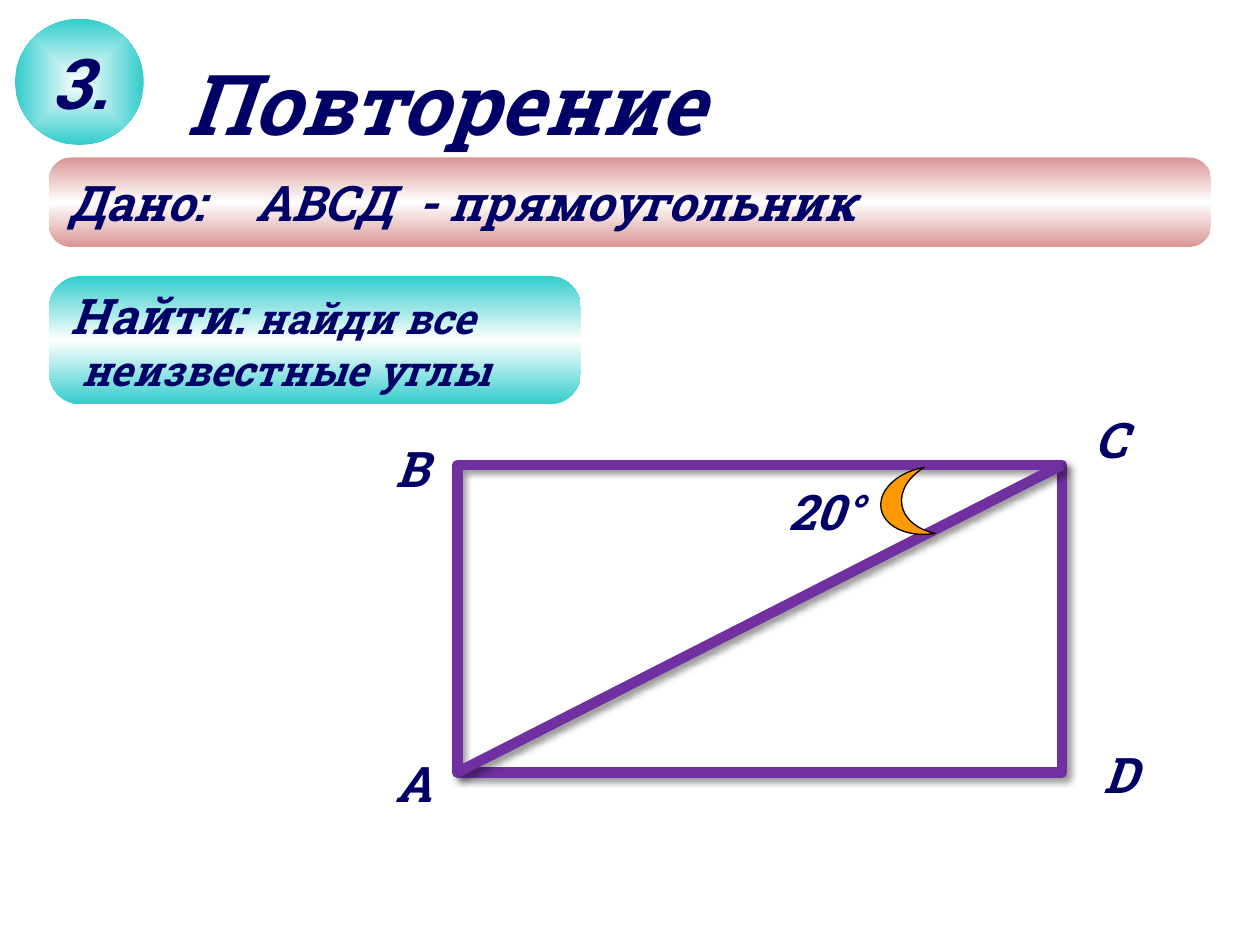
from dataclasses import dataclass

from lxml import etree
from pptx import Presentation
from pptx.dml.color import RGBColor
from pptx.enum.shapes import MSO_CONNECTOR as CONN, MSO_SHAPE as SHAPE
from pptx.enum.text import MSO_ANCHOR as ANCHOR, PP_ALIGN as ALIGN
from pptx.oxml import parse_xml
from pptx.oxml.ns import nsdecls, qn
from pptx.util import Inches, Pt


@dataclass(frozen=True)
class Theme:
    """Font, colours and type sizes of the slide."""
    font: str = "Roboto Slab"
    ink: str = "000066"
    outline: str = "5E457C"
    teal: str = "33CCCC"
    rose: str = "D99694"
    white: str = "FFFFFF"
    black: str = "000000"
    violet: str = "7030A0"
    orange: str = "FF9900"
    title: int = 48
    number: int = 40
    body: int = 28
    small: int = 24


T = Theme()


def rgb(value):
    """Turn a hex string into a colour."""
    return RGBColor.from_string(value)


def box_of(left, top, width, height):
    """Give a box in inches as lengths."""
    return [Inches(v) for v in (left, top, width, height)]


def write(p, text, size=T.body, align=ALIGN.LEFT):
    """Add a bold italic run to a paragraph and return it."""
    p.alignment = align
    r = p.add_run()
    r.text = text
    f = r.font
    f.name, f.size, f.bold, f.italic = T.font, Pt(size), True, True
    f.color.rgb = rgb(T.ink)
    return r


def gradient(sp, stops, direction):
    """Fill a shape with colour stops along the given direction element."""
    marks = "".join(f'<a:gs pos="{pos * 1000}"><a:srgbClr val="{c}"/></a:gs>'
                    for pos, c in stops)
    fill = parse_xml(f'<a:gradFill {nsdecls("a")} rotWithShape="1">'
                     f'<a:gsLst>{marks}</a:gsLst>{direction}</a:gradFill>')
    sp._element.spPr.find(qn("a:prstGeom")).addnext(fill)


def stroke(sp):
    """Give a side of the figure its thick violet line and soft shadow."""
    sp.line.color.rgb, sp.line.width = rgb(T.violet), Pt(6)
    spPr = sp._element.spPr
    for old in spPr.findall(qn("a:effectLst")):
        spPr.remove(old)
    spPr.append(parse_xml(
        f'<a:effectLst {nsdecls("a")}><a:outerShdw blurRad="{Pt(4)}" dist="{Pt(3)}" '
        f'dir="2700000" algn="tl" rotWithShape="0"><a:srgbClr val="{T.black}">'
        '<a:alpha val="40000"/></a:srgbClr></a:outerShdw></a:effectLst>'))


def plain_shape(s, kind, box):
    """Add a shape with no line or shadow and its text in the middle."""
    sp = s.shapes.add_shape(kind, *box_of(*box))
    sp.shadow.inherit = False
    sp.line.fill.background()
    sp.text_frame.vertical_anchor = ANCHOR.MIDDLE
    return sp


def label(s, box, text):
    """Place a label of the figure."""
    tf = s.shapes.add_textbox(*box_of(*box)).text_frame
    tf.word_wrap = True
    write(tf.paragraphs[0], text)


def heading(s, box):
    """Place the title in the title placeholder."""
    sp = s.shapes.title
    sp.left, sp.top, sp.width, sp.height = box_of(*box)
    tf = sp.text_frame
    tf.word_wrap, tf.vertical_anchor = True, ANCHOR.TOP
    p = tf.paragraphs[0]
    p.line_spacing = 1.0
    r = write(p, "Повторение", size=T.title)
    r.font._element.insert(0, parse_xml(
        f'<a:ln {nsdecls("a")} w="{Pt(0.71)}"><a:solidFill>'
        f'<a:srgbClr val="{T.outline}"/></a:solidFill></a:ln>'))


def badge(s, box):
    """Place the round task number."""
    sp = plain_shape(s, SHAPE.OVAL, box)
    gradient(sp, [(0, T.white), (100, T.teal)],
             '<a:path path="shape"><a:fillToRect l="50000" t="50000" '
             'r="50000" b="50000"/></a:path>')
    sp.text_frame.word_wrap = False
    write(sp.text_frame.paragraphs[0], "3.", size=T.number, align=ALIGN.CENTER)


def panel(s, box, color):
    """Add a rounded panel with a light middle band and return its text frame."""
    sp = plain_shape(s, SHAPE.ROUNDED_RECTANGLE, box)
    sp.adjustments[0] = 0.25
    gradient(sp, [(0, color), (50, T.white), (100, color)],
             '<a:lin ang="5400000" scaled="1"/>')
    sp.text_frame.word_wrap = True
    return sp.text_frame


def given(s, box):
    """Place the panel with what is given."""
    p = panel(s, box, T.rose).paragraphs[0]
    tabs = etree.SubElement(p._p.get_or_add_pPr(), qn("a:tabLst"))
    for stop in (1.49, 2.77):
        etree.SubElement(tabs, qn("a:tab"), pos=str(Inches(stop)), algn="l")
    write(p, "Дано:\tАВСД\t- прямоугольник")


def wanted(s, box):
    """Place the panel with what is to be found."""
    tf = panel(s, box, T.teal)
    p = tf.paragraphs[0]
    write(p, "Найти: ")
    write(p, "найди все", size=T.small)
    p = tf.add_paragraph()
    p._p.get_or_add_pPr().set("marL", str(Inches(0.08)))
    write(p, "неизвестные углы", size=T.small)


def figure(s, box):
    """Draw the rectangle with its diagonal, marked angle and corner labels."""
    left, top, width, height = box
    right, bottom = left + width, top + height
    sp = s.shapes.add_shape(SHAPE.RECTANGLE, *box_of(*box))
    sp.fill.background()
    stroke(sp)
    ends = [Inches(v) for v in (left, bottom, right, top)]
    stroke(s.shapes.add_connector(CONN.STRAIGHT, *ends))

    label(s, (right - 2.27, top + 0.08, 1.01, 0.57), "20°")
    moon = s.shapes.add_shape(SHAPE.MOON, *box_of(right - 1.44, top + 0.05, 0.39, 0.53))
    moon.shadow.inherit = False
    moon.adjustments[0], moon.rotation = 0.43, 350.3
    moon.fill.solid()
    moon.fill.fore_color.rgb = rgb(T.orange)
    moon.line.color.rgb, moon.line.width = rgb(T.black), Pt(0.75)

    for text, x, y in (("А", left - 0.59, bottom - 0.2), ("В", left - 0.59, top - 0.26),
                       ("С", right + 0.16, top - 0.49), ("D", right + 0.23, bottom - 0.27)):
        label(s, (x, y, 0.5, 0.57), text)


def main():
    """Build the slide and save it."""
    prs = Presentation()
    prs.slide_width, prs.slide_height = Inches(10), Inches(7.5)
    s = prs.slides.add_slide(prs.slide_layouts[5])
    figure(s, (3.63, 3.69, 4.8, 2.44))
    given(s, (0.39, 1.25, 9.22, 0.71))
    wanted(s, (0.39, 2.19, 4.22, 1.02))
    badge(s, (0.12, 0.15, 1.02, 1))
    heading(s, (1.38, 0.36, 4.72, 0.91))
    prs.save("out.pptx")


if __name__ == "__main__":
    main()
